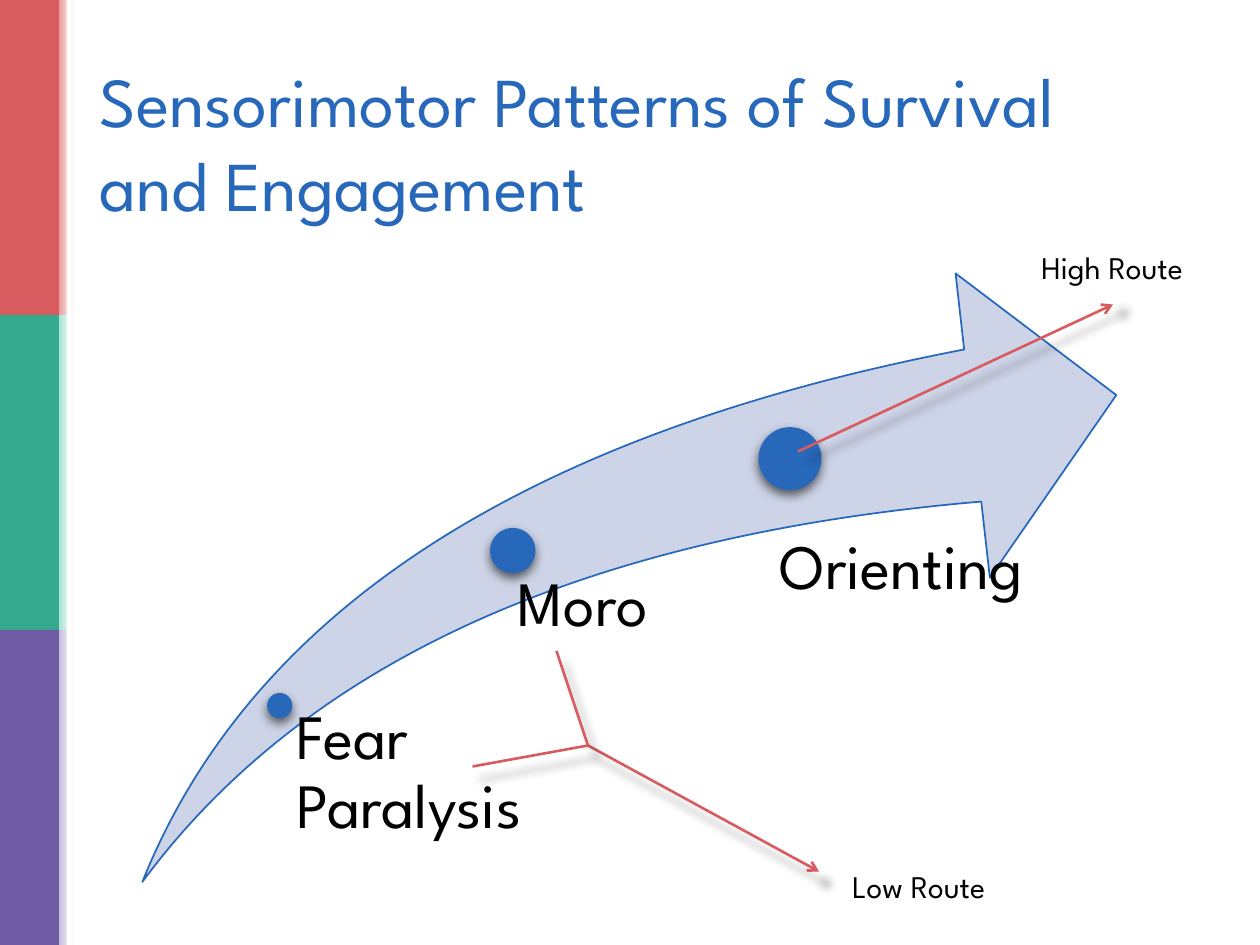
import pptx
import pptx.dml.color
import pptx.enum.shapes
import pptx.enum.text
import pptx.oxml
import pptx.oxml.ns
import pptx.util

Pt = pptx.util.Pt
RGBColor = pptx.dml.color.RGBColor
SHAPE = pptx.enum.shapes.MSO_SHAPE
ANCHOR = pptx.enum.text.MSO_ANCHOR

BLUE = RGBColor(0x27, 0x68, 0xBB)
PALE_BLUE = RGBColor(0xCD, 0xD4, 0xE7)
RED = RGBColor(0xD8, 0x5B, 0x5F)
GREEN = RGBColor(0x35, 0xAA, 0x8E)
PURPLE = RGBColor(0x6F, 0x5B, 0xA3)
PALE_RED = RGBColor(0xE8, 0x9D, 0x9F)
PALE_GREEN = RGBColor(0xA7, 0xE4, 0xD5)
PALE_PURPLE = RGBColor(0xC5, 0xBD, 0xDA)
WHITE = RGBColor(0xFF, 0xFF, 0xFF)
BLACK = RGBColor(0, 0, 0)
FONT = "League Spartan"

# Content, lengths in points
SLIDE_SIZE = (720, 540)
BANDS = [(RED, PALE_RED), (GREEN, PALE_GREEN), (PURPLE, PALE_PURPLE)]
BAND_WIDTH, FADE_WIDTH = 33.84, 8.64
TITLE = "Sensorimotor Patterns of Survival and Engagement"
ARROW_BOX = (81.36, 156.24, 556.56, 347.76)
# Stage: dot centre x, centre y, diameter; label, its box, left inset
STAGES = [
    ((159.84, 403.2, 14.4), "Fear Paralysis", (162, 403.2, 167.76, 100.8), 7.7),
    ((293.04, 314.64, 25.92), "Moro", (282.24, 326.88, 126.72, 93.6), 13.7),
    ((451.44, 262.08, 36), "Orienting", (426.24, 306, 197.28, 121.68), 19.3),
]
ROUTE_LABELS = [
    ("Low Route", (480, 492, 156, 29)),
    ("High Route", (588, 138, 114, 30)),
]
JUNCTION = (336, 426)
# Route: start, end, has an arrowhead
ROUTES = [
    (JUNCTION, (468, 498), True),
    ((456, 258), (636, 174), True),
    (JUNCTION, (318, 372), False),
    (JUNCTION, (270, 438), False),
]
DOT_SHADOW = {"alpha": 60, "blur": 6, "distance": 3, "scale": 100}
ROUTE_SHADOW = {"alpha": 32, "blur": 5, "distance": 1, "scale": 101.5}

presentation = pptx.Presentation()
presentation.slide_width, presentation.slide_height = map(Pt, SLIDE_SIZE)
slide = presentation.slides.add_slide(presentation.slide_layouts[6])


def add_shape(kind, box, fill):
    shape = slide.shapes.add_shape(kind, *map(Pt, box))
    shape.shadow.inherit = False
    shape.fill.solid()
    shape.fill.fore_color.rgb = fill
    shape.line.fill.background()
    return shape


def add_text(text, box, size, color=BLACK, spacing=1.0, **frame_format):
    frame = slide.shapes.add_textbox(*map(Pt, box)).text_frame
    frame.word_wrap = True
    for name, value in frame_format.items():
        setattr(frame, name, value)
    paragraph = frame.paragraphs[0]
    paragraph.text = text
    paragraph.line_spacing = spacing
    for name, value in {"name": FONT, "size": Pt(size)}.items():
        setattr(paragraph.font, name, value)
    paragraph.font.color.rgb = color


def set_shadow(shape, alpha, blur, distance, scale):
    properties = shape._element.spPr
    for effects in properties.findall(pptx.oxml.ns.qn("a:effectLst")):
        properties.remove(effects)
    properties.append(pptx.oxml.parse_xml(
        f'<a:effectLst {pptx.oxml.ns.nsdecls("a")}>'
        f'<a:outerShdw blurRad="{Pt(blur)}" dist="{Pt(distance)}" dir="5400000" '
        f'sx="{int(scale * 1000)}" sy="{int(scale * 1000)}" algn="tl" rotWithShape="0">'
        f'<a:srgbClr val="{BLACK}"><a:alpha val="{alpha * 1000}"/></a:srgbClr>'
        '</a:outerShdw></a:effectLst>'))


# Coloured side bands, each fading to white on the right
band_height = SLIDE_SIZE[1] / len(BANDS)
for index, (color, pale) in enumerate(BANDS):
    top = index * band_height
    add_shape(SHAPE.RECTANGLE, (0, top, BAND_WIDTH, band_height), color)
    fade = add_shape(SHAPE.RECTANGLE, (BAND_WIDTH, top, FADE_WIDTH, band_height), pale)
    fade.fill.gradient()
    fade.fill.gradient_angle = 0
    for stop, stop_color, position in zip(fade.fill.gradient_stops, (pale, WHITE), (0, 1)):
        stop.color.rgb = stop_color
        stop.position = position
add_shape(SHAPE.RECTANGLE, (38.16, 0, 2.88, SLIDE_SIZE[1]), WHITE)

# Title
add_text(TITLE, (49.68, 28.8, 620.64, 104.4), 40, BLUE, vertical_anchor=ANCHOR.MIDDLE)

# Swoosh arrow
swoosh = add_shape(SHAPE.SWOOSH_ARROW, ARROW_BOX, PALE_BLUE)
swoosh.adjustments[0] = swoosh.adjustments[1] = 0.25
swoosh.line.color.rgb = BLUE
swoosh.line.width = Pt(1)

# Stages along the arrow
for (x, y, diameter), label, box, inset in STAGES:
    dot = add_shape(SHAPE.OVAL, (x - diameter / 2, y - diameter / 2, diameter, diameter), BLUE)
    set_shadow(dot, **DOT_SHADOW)
    add_text(label, box, 36, spacing=0.9, margin_left=Pt(inset),
             margin_top=0, margin_right=0, margin_bottom=0)

# Routes and their labels
for start, end, has_head in ROUTES:
    route = slide.shapes.add_connector(
        pptx.enum.shapes.MSO_CONNECTOR.STRAIGHT, *map(Pt, start + end))
    route.line.color.rgb = RED
    route.line.width = Pt(1.5)
    if has_head:
        route.line._get_or_add_ln().append(pptx.oxml.parse_xml(
            f'<a:tailEnd {pptx.oxml.ns.nsdecls("a")} type="arrow"/>'))
    set_shadow(route, **ROUTE_SHADOW)
for label, box in ROUTE_LABELS:
    add_text(label, box, 18)

presentation.save("out.pptx")
